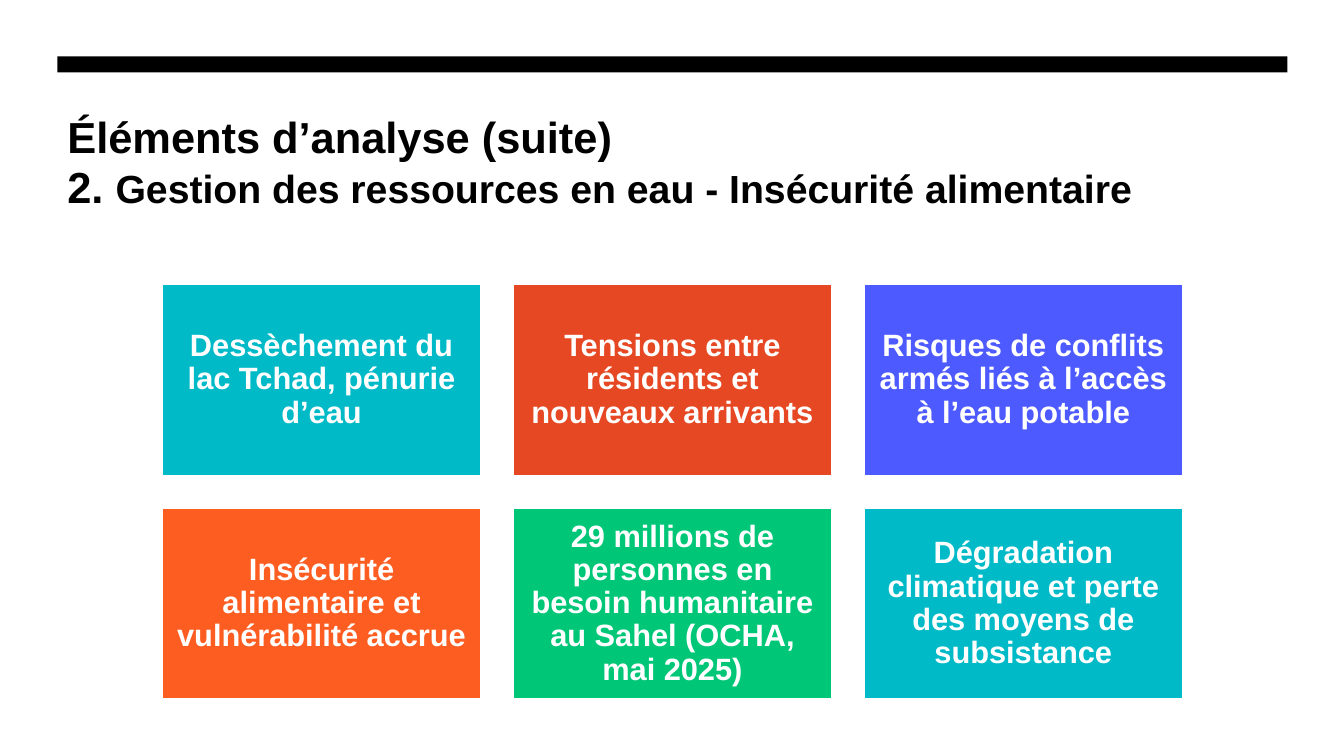
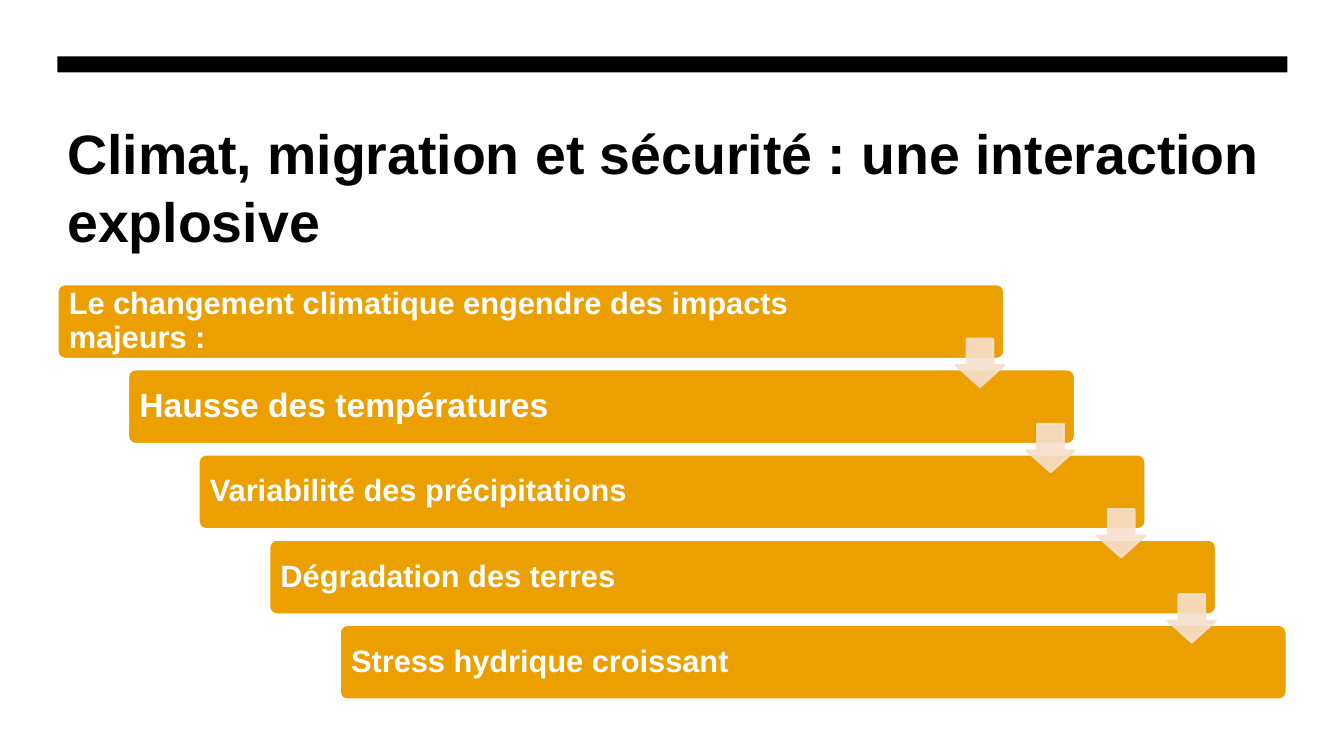
import pptx
import pptx.util
import pptx.dml.color
import pptx.enum.shapes
import pptx.enum.text
import pptx.oxml
import pptx.oxml.ns
from pptx.util import Inches

RGBColor = pptx.dml.color.RGBColor
SHAPE = pptx.enum.shapes.MSO_SHAPE
ALIGN = pptx.enum.text.PP_ALIGN
ANCHOR = pptx.enum.text.MSO_ANCHOR

# Shared style
FONT = "Arial"
BLACK = RGBColor(0x00, 0x00, 0x00)
WHITE = RGBColor(0xFF, 0xFF, 0xFF)
TEAL = RGBColor(0x00, 0xBA, 0xC8)
RED = RGBColor(0xE6, 0x48, 0x23)
BLUE = RGBColor(0x4D, 0x5A, 0xFF)
ORANGE = RGBColor(0xFE, 0x5D, 0x21)
GREEN = RGBColor(0x00, 0xC7, 0x77)
AMBER = RGBColor(0xEB, 0xA0, 0x00)
PEACH = RGBColor(0xF7, 0xDF, 0xCC)
LEFT, CONTENT_WIDTH = 0.57, 12.2


def write(box, lines, size=22, color=WHITE, align=ALIGN.LEFT,
          anchor=ANCHOR.MIDDLE, spacing=0.9, insets=(0.09, 0.02, 0.09, 0.02)):
    """Fill box with lines; each line is a string or a list of (text, size)."""
    frame = box.text_frame
    frame.word_wrap = True
    frame.vertical_anchor = anchor
    (frame.margin_left, frame.margin_top,
     frame.margin_right, frame.margin_bottom) = map(Inches, insets)
    for index, line in enumerate(lines):
        para = frame.paragraphs[0] if index == 0 else frame.add_paragraph()
        para.alignment = align
        para.line_spacing = spacing
        for text, points in [(line, size)] if isinstance(line, str) else line:
            span = para.add_run()
            span.text = text
            span.font.name = FONT
            span.font.size = pptx.util.Pt(points)
            span.font.bold = True
            span.font.color.rgb = color


def add_block(page, kind, left, top, width, height, fill, line=None):
    block = page.shapes.add_shape(
        kind, Inches(left), Inches(top), Inches(width), Inches(height))
    block.shadow.inherit = False
    block.fill.solid()
    block.fill.fore_color.rgb = fill
    if line is None:
        block.line.fill.background()
    else:
        block.line.color.rgb = line
        block.line.width = pptx.util.Pt(1.5)
    return block


deck = pptx.Presentation()
deck.slide_width, deck.slide_height = Inches(13.33), Inches(7.5)

# Black band and title on both slides
titles = [
    ([[("Éléments d’analyse (suite)", 31)],
      [("2. ", 31),
       ("Gestion des ressources en eau - Insécurité alimentaire", 28)]], 0.97, 0.05),
    ([[("Climat, migration et sécurité : une interaction explosive", 39.6)]], 1.03, 0.09),
]
pages = []
for lines, spacing, top_inset in titles:
    page = deck.slides.add_slide(deck.slide_layouts[6])
    add_block(page, SHAPE.RECTANGLE, LEFT, 0.56, CONTENT_WIDTH, 0.16, BLACK)
    title = page.shapes.add_textbox(
        Inches(LEFT), Inches(1.07), Inches(CONTENT_WIDTH), Inches(1.6))
    write(title, lines, color=BLACK, anchor=ANCHOR.TOP, spacing=spacing,
          insets=(0.1, top_inset, 0.1, 0.05))
    pages.append(page)
factors_page, cascade_page = pages

# Slide 1: grid of factors
factors = [
    ("Dessèchement du lac Tchad, pénurie d’eau", TEAL),
    ("Tensions entre résidents et nouveaux arrivants", RED),
    ("Risques de conflits armés liés à l’accès à l’eau potable", BLUE),
    ("Insécurité alimentaire et vulnérabilité accrue", ORANGE),
    ("29 millions de personnes en besoin humanitaire au Sahel (OCHA, mai 2025)", GREEN),
    ("Dégradation climatique et perte des moyens de subsistance", TEAL),
]
card_width, card_height, gap = 3.16, 1.9, 0.32
for index, (text, color) in enumerate(factors):
    row, column = divmod(index, 3)
    card = add_block(factors_page, SHAPE.RECTANGLE,
                     1.61 + column * (card_width + gap),
                     2.82 + row * (card_height + gap),
                     card_width, card_height, color, WHITE)
    write(card, [text], align=ALIGN.CENTER)

# Slide 2: staggered steps
steps = [
    ("Le changement climatique engendre des impacts majeurs :", 22),
    ("Hausse des températures", 24),
    ("Variabilité des précipitations", 22),
    ("Dégradation des terres", 22),
    ("Stress hydrique croissant", 22),
]
step_right, step_down = 0.7, 0.845
for index, (text, size) in enumerate(steps):
    bar = add_block(cascade_page, SHAPE.ROUNDED_RECTANGLE,
                    LEFT + index * step_right, 2.82 + index * step_down,
                    9.39, 0.74, AMBER, WHITE)
    bar.adjustments[0] = 0.1
    write(bar, [text], size=size, insets=(0.09, 0.02, 1.2, 0.02))

# Translucent arrows from each step to the next
for index in range(len(steps) - 1):
    arrow = add_block(cascade_page, SHAPE.DOWN_ARROW,
                      9.48 + index * step_right, 3.36 + index * step_down,
                      0.48, 0.48, PEACH, PEACH)
    arrow.adjustments[0] = 0.55
    arrow.adjustments[1] = 0.45
    for color in arrow.element.spPr.iter(pptx.oxml.ns.qn("a:srgbClr")):
        color.append(pptx.oxml.parse_xml(
            '<a:alpha xmlns:a="http://schemas.openxmlformats.org/drawingml/2006/main"'
            ' val="90000"/>'))

deck.save("out.pptx")
